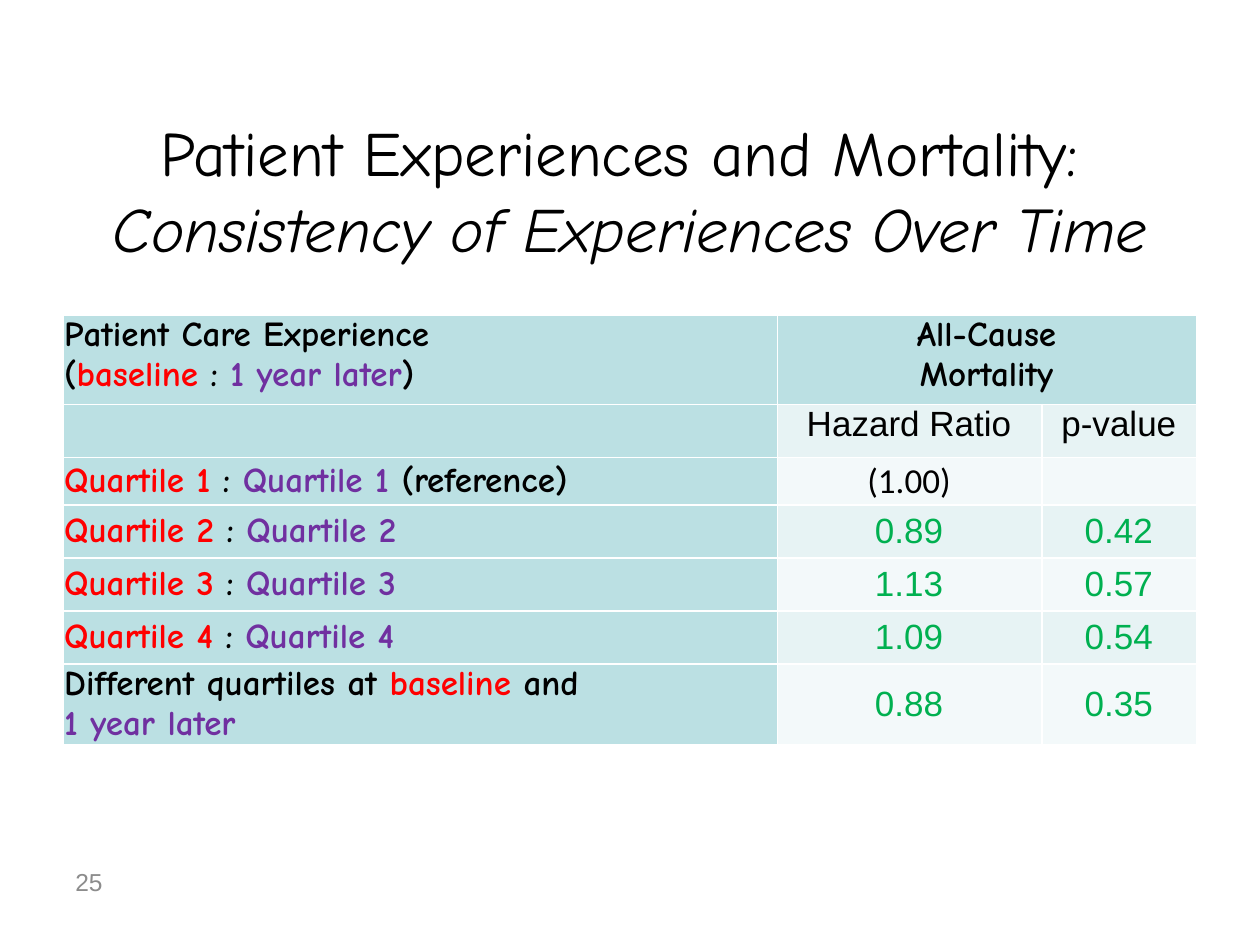
from dataclasses import dataclass

from pptx import Presentation
from pptx.dml.color import RGBColor
from pptx.enum.text import MSO_ANCHOR, PP_ALIGN
from pptx.util import Inches, Pt

CENTER, LEFT = PP_ALIGN.CENTER, PP_ALIGN.LEFT
TOP, MIDDLE = MSO_ANCHOR.TOP, MSO_ANCHOR.MIDDLE

BLACK, RED, PURPLE, GREEN, GRAY = "000000", "FF0000", "7030A0", "00B050", "8C8C8C"
LABEL_FILL, BAND_FILLS = "BBE0E3", ("F3F9FA", "E7F3F4")
HEADING_FONT, NUMBER_FONT, REFERENCE_FONT = "Comic Neue", "Arial", "Calibri"

TITLE_LAYOUT = 5
COLUMN_WIDTHS = (5.67, 2.1, 1.23)
ROW_HEIGHTS = (0.71, 0.42, 0.38, 0.42, 0.42, 0.42, 0.43)


@dataclass(frozen=True)
class TextRun:
    text: str
    color: str = BLACK
    font: str = HEADING_FONT
    size: float = 20
    bold: bool = True
    italic: bool = False


@dataclass(frozen=True)
class CellContent:
    """Each line is a tuple of runs and becomes one paragraph."""
    lines: tuple = ()
    alignment: PP_ALIGN = CENTER
    anchor: MSO_ANCHOR = MIDDLE


def rgb(value: str) -> RGBColor:
    return RGBColor.from_string(value)


def add_run(paragraph, content: TextRun) -> None:
    run = paragraph.add_run()
    run.text = content.text
    font = run.font
    font.name, font.size = content.font, Pt(content.size)
    font.bold, font.italic = content.bold, content.italic
    font.color.rgb = rgb(content.color)


def fill_cell(cell, content: CellContent, fill: str) -> None:
    cell.fill.solid()
    cell.fill.fore_color.rgb = rgb(fill)
    cell.margin_left, cell.margin_right = Inches(0.01), Inches(0.02)
    cell.margin_top = cell.margin_bottom = 0
    cell.vertical_anchor = content.anchor
    text_frame = cell.text_frame
    for index, line in enumerate(content.lines):
        paragraph = text_frame.add_paragraph() if index else text_frame.paragraphs[0]
        paragraph.alignment = content.alignment
        for run in line:
            add_run(paragraph, run)


def number(text: str, color: str = GREEN, font: str = NUMBER_FONT,
           anchor: MSO_ANCHOR = MIDDLE) -> CellContent:
    return CellContent(((TextRun(text, color, font, bold=False),),), anchor=anchor)


def quartile_label(quartile: int) -> CellContent:
    name = f"Quartile {quartile}"
    runs = (TextRun(name, RED), TextRun(" : "), TextRun(name, PURPLE))
    if quartile == 1:
        runs += (TextRun(" (reference)"),)
    return CellContent((runs,), LEFT)


def table_rows() -> list[tuple[CellContent, ...]]:
    empty = CellContent()
    baseline, later = TextRun("baseline", RED), TextRun("1 year later", PURPLE)
    experience = CellContent((
        (TextRun("Patient Care Experience"),),
        (TextRun("("), baseline, TextRun(" : "), later, TextRun(")")),
    ), LEFT, TOP)
    mortality = CellContent(((TextRun("All-Cause"),), (TextRun("Mortality"),)), anchor=TOP)
    different = CellContent((
        (TextRun("Different quartiles at "), baseline, TextRun(" and")),
        (later,),
    ), LEFT)
    return [
        (experience, mortality, empty),
        (empty, number("Hazard Ratio", BLACK, anchor=TOP),
         number("p-value", BLACK, anchor=TOP)),
        (quartile_label(1), number("(1.00)", BLACK, REFERENCE_FONT), empty),
        (quartile_label(2), number("0.89"), number("0.42")),
        (quartile_label(3), number("1.13"), number("0.57")),
        (quartile_label(4), number("1.09"), number("0.54")),
        (different, number("0.88"), number("0.35")),
    ]


def add_title(slide) -> None:
    title = slide.shapes.title
    title.left, title.top = Inches(0), Inches(0.75)
    title.width, title.height = Inches(10), Inches(1.5)
    title.text_frame.vertical_anchor = MIDDLE
    paragraph = title.text_frame.paragraphs[0]
    paragraph.alignment = CENTER
    add_run(paragraph, TextRun("Patient Experiences and Mortality: ", size=36, bold=False))
    paragraph.add_line_break()
    add_run(paragraph, TextRun("Consistency of Experiences Over Time",
                               size=36, bold=False, italic=True))


def add_mortality_table(slide) -> None:
    table = slide.shapes.add_table(
        len(ROW_HEIGHTS), len(COLUMN_WIDTHS), Inches(0.5), Inches(2.5),
        Inches(sum(COLUMN_WIDTHS)), Inches(sum(ROW_HEIGHTS))).table
    for column, width in zip(table.columns, COLUMN_WIDTHS):
        column.width = Inches(width)
    for row, height in zip(table.rows, ROW_HEIGHTS):
        row.height = Inches(height)
    table.cell(0, 1).merge(table.cell(0, 2))
    for row_index, contents in enumerate(table_rows()):
        for column_index, content in enumerate(contents):
            is_label = row_index == 0 or column_index == 0
            fill = LABEL_FILL if is_label else BAND_FILLS[row_index % 2]
            fill_cell(table.cell(row_index, column_index), content, fill)


def add_slide_number(slide) -> None:
    box = slide.shapes.add_textbox(Inches(0.5), Inches(6.83), Inches(2.33), Inches(0.52))
    box.text_frame.word_wrap = True
    add_run(box.text_frame.paragraphs[0],
            TextRun("25", GRAY, NUMBER_FONT, size=14, bold=False))


def main() -> None:
    presentation = Presentation()
    presentation.slide_width, presentation.slide_height = Inches(10), Inches(7.5)
    slide = presentation.slides.add_slide(presentation.slide_layouts[TITLE_LAYOUT])
    add_title(slide)
    add_mortality_table(slide)
    add_slide_number(slide)
    presentation.save("out.pptx")


if __name__ == "__main__":
    main()
